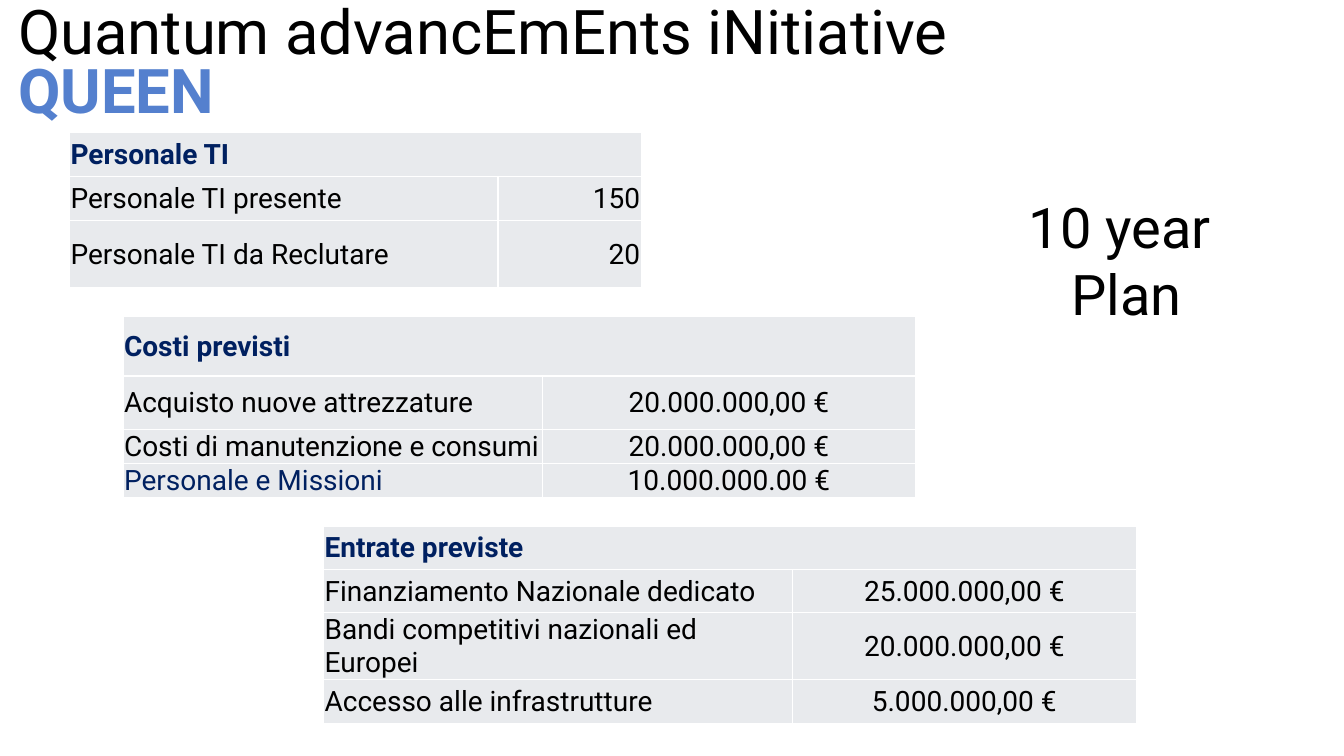
from lxml import etree
from pptx import Presentation
from pptx.dml.color import RGBColor
from pptx.enum.text import MSO_ANCHOR, MSO_AUTO_SIZE, PP_ALIGN
from pptx.oxml.ns import qn
from pptx.util import Inches, Pt

LEFT, CENTER, RIGHT = PP_ALIGN.LEFT, PP_ALIGN.CENTER, PP_ALIGN.RIGHT
MIDDLE = MSO_ANCHOR.MIDDLE
BLACK = RGBColor(0x00, 0x00, 0x00)
NAVY = RGBColor(0x00, 0x20, 0x60)
BLUE = RGBColor(0x54, 0x80, 0xCE)
PALE_GREY = RGBColor(0xE8, 0xEA, 0xED)
WHITE = RGBColor(0xFF, 0xFF, 0xFF)
FONT_NAME = "Roboto"
TITLE_ONLY_LAYOUT = 5

TITLE_RUNS = [
    ("Quantum advancEmEnts iNitiative", 44, BLACK, False),
    (" ", 36, BLACK, False),
]
ACRONYM_RUN = ("QUEEN", 44, BLUE, True)
PLAN_LINES = ["10 year ", "Plan"]

# Each row is label, value, label colour
TABLES = [
    {
        "heading": "Personale TI",
        "rows": [
            ("Personale TI presente", "150", BLACK),
            ("Personale TI da Reclutare", "20", BLACK),
        ],
        "position": (0.69, 1.31),
        "widths": (4.25, 1.42),
        "heights": (0.44, 0.44, 0.66),
        "value_alignment": RIGHT,
    },
    {
        "heading": "Costi previsti",
        "rows": [
            ("Acquisto nuove attrezzature", "20.000.000,00 €", BLACK),
            ("Costi di manutenzione e consumi", "20.000.000,00 €", BLACK),
            ("Personale e Missioni", "10.000.000.00 €", NAVY),
        ],
        "position": (1.22, 3.14),
        "widths": (4.16, 3.7),
        "heights": (0.59, 0.53, 0.33, 0.33),
        "value_alignment": CENTER,
    },
    {
        "heading": "Entrate previste",
        "rows": [
            ("Finanziamento Nazionale dedicato", "25.000.000,00 €", BLACK),
            ("Bandi competitivi nazionali ed Europei", "20.000.000,00 €", BLACK),
            ("Accesso alle infrastrutture", "5.000.000,00 €", BLACK),
        ],
        "position": (3.21, 5.22),
        "widths": (4.65, 3.41),
        "heights": (0.43, 0.43, 0.66, 0.44),
        "value_alignment": CENTER,
    },
]


def add_run(paragraph, text, size, color, bold=False):
    run = paragraph.add_run()
    run.text = text
    run.font.name = FONT_NAME
    run.font.size = Pt(size)
    run.font.bold = bold
    run.font.color.rgb = color


def add_borders(cell):
    """Put a thin white line on all four sides, ahead of the cell's fill."""
    properties = cell._tc.get_or_add_tcPr()
    for index, side in enumerate(("a:lnL", "a:lnR", "a:lnT", "a:lnB")):
        line = etree.Element(qn(side), w=str(Pt(1)))
        fill = etree.SubElement(line, qn("a:solidFill"))
        etree.SubElement(fill, qn("a:srgbClr"), val=str(WHITE))
        properties.insert(index, line)


def fill_cell(cell, text, color, bold=False, alignment=LEFT):
    cell.margin_left = cell.margin_right = cell.margin_top = Inches(0.01)
    cell.margin_bottom = 0
    cell.vertical_anchor = MIDDLE
    paragraph = cell.text_frame.paragraphs[0]
    paragraph.alignment = alignment
    add_run(paragraph, text, 20, color, bold)


def add_budget_table(slide, content):
    widths, heights = content["widths"], content["heights"]
    left, top = content["position"]
    table = slide.shapes.add_table(
        len(heights), len(widths), Inches(left), Inches(top),
        Inches(sum(widths)), Inches(sum(heights))).table
    table.first_row = table.horz_banding = False
    for column, width in zip(table.columns, widths):
        column.width = Inches(width)
    for row, height in zip(table.rows, heights):
        row.height = Inches(height)
    for cell in table.iter_cells():
        cell.fill.solid()
        cell.fill.fore_color.rgb = PALE_GREY
        add_borders(cell)

    table.cell(0, 0).merge(table.cell(0, 1))
    fill_cell(table.cell(0, 0), content["heading"], NAVY, bold=True)
    for index, (label, value, color) in enumerate(content["rows"], start=1):
        fill_cell(table.cell(index, 0), label, color)
        fill_cell(table.cell(index, 1), value, BLACK,
                  alignment=content["value_alignment"])


def add_title(slide):
    title = slide.shapes.title
    title.left, title.top = Inches(0.08), Inches(0)
    title.width, title.height = Inches(12.57), Inches(1.31)
    frame = title.text_frame
    frame.word_wrap = True
    frame.auto_size = MSO_AUTO_SIZE.NONE
    frame.vertical_anchor = MIDDLE
    paragraph = frame.paragraphs[0]
    paragraph.alignment = LEFT
    paragraph.line_spacing = 0.8
    for run in TITLE_RUNS:
        add_run(paragraph, *run)
    paragraph.add_line_break()
    add_run(paragraph, *ACRONYM_RUN)


def add_plan(slide):
    box = slide.shapes.add_textbox(
        Inches(9.87), Inches(1.86), Inches(2.61), Inches(1.45))
    frame = box.text_frame
    frame.word_wrap = True
    frame.auto_size = MSO_AUTO_SIZE.SHAPE_TO_FIT_TEXT
    for index, line in enumerate(PLAN_LINES):
        paragraph = frame.add_paragraph() if index else frame.paragraphs[0]
        paragraph.alignment = CENTER
        add_run(paragraph, line, 40, BLACK)


def main():
    presentation = Presentation()
    presentation.slide_width = Inches(13.33)
    presentation.slide_height = Inches(7.5)
    slide = presentation.slides.add_slide(
        presentation.slide_layouts[TITLE_ONLY_LAYOUT])
    add_title(slide)
    for content in TABLES:
        add_budget_table(slide, content)
    add_plan(slide)
    presentation.save("out.pptx")


if __name__ == "__main__":
    main()
